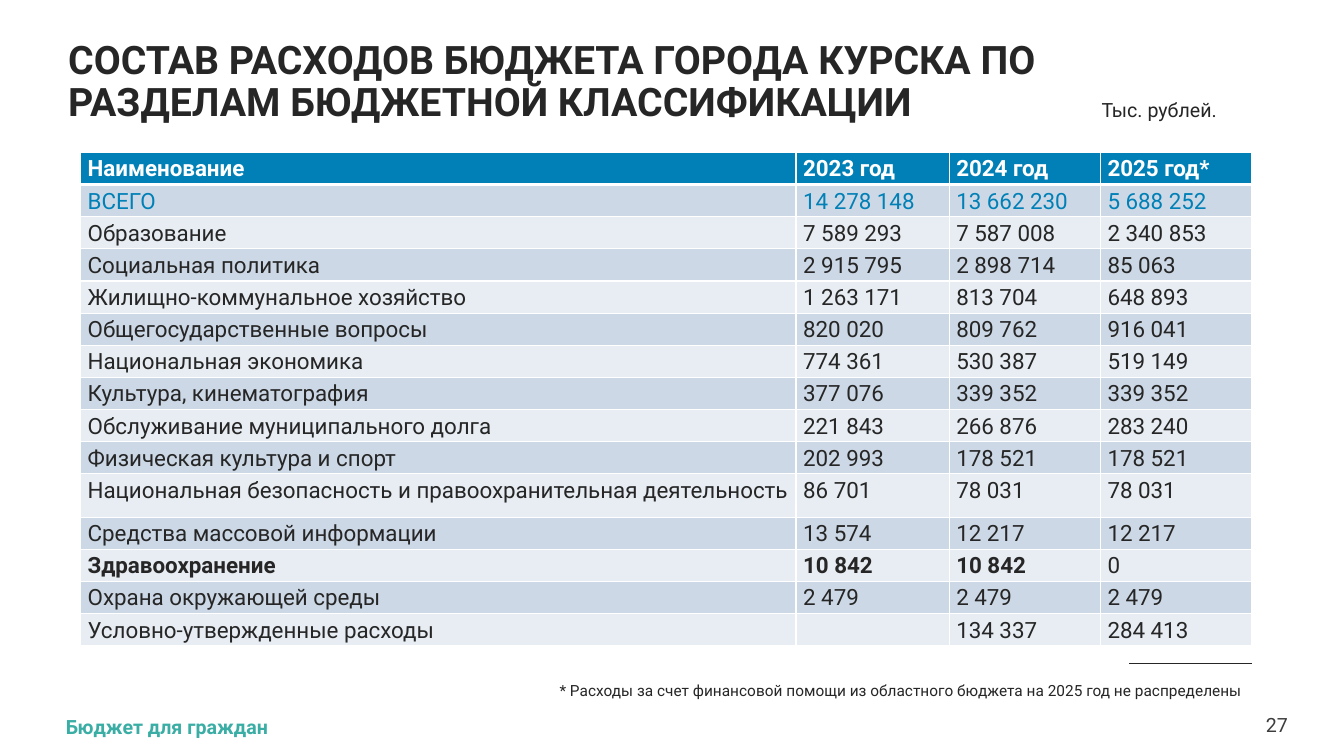
from dataclasses import dataclass

from lxml import etree
from pptx import Presentation
from pptx.dml.color import RGBColor
from pptx.enum.shapes import MSO_CONNECTOR
from pptx.enum.text import MSO_ANCHOR, PP_ALIGN
from pptx.oxml.ns import qn
from pptx.util import Cm, Pt

STRAIGHT = MSO_CONNECTOR.STRAIGHT
TOP, MIDDLE = MSO_ANCHOR.TOP, MSO_ANCHOR.MIDDLE
LEFT, RIGHT = PP_ALIGN.LEFT, PP_ALIGN.RIGHT


@dataclass(frozen=True)
class Theme:
    font: str = "Roboto"
    ink: str = "262626"
    page_ink: str = "3C3C3C"
    accent: str = "0080B6"
    footer: str = "3AADA5"
    white: str = "FFFFFF"
    bands: tuple = ("CCD8E5", "E7EDF3")
    title_size: float = 28
    table_size: float = 16
    label_size: float = 14
    note_size: float = 11


@dataclass(frozen=True)
class Box:
    left: float
    top: float
    width: float
    height: float

    def lengths(self):
        return Cm(self.left), Cm(self.top), Cm(self.width), Cm(self.height)


THEME = Theme()
COLUMN_WIDTHS = (18.03, 3.86, 3.81, 3.81)
ROW_HEIGHT = 0.81
TALL_ROW, TALL_HEIGHT = 10, 1.09
TOTAL_ROW = 1
BOLD_CELLS = {(12, 0), (12, 1), (12, 2)}
EXPENSES = (
    ("Наименование", "2023 год", "2024 год", "2025 год*"),
    ("ВСЕГО", "14 278 148", "13 662 230", "5 688 252"),
    ("Образование", "7 589 293", "7 587 008", "2 340 853"),
    ("Социальная политика", "2 915 795", "2 898 714", "85 063"),
    ("Жилищно-коммунальное хозяйство", "1 263 171", "813 704", "648 893"),
    ("Общегосударственные вопросы", "820 020", "809 762", "916 041"),
    ("Национальная экономика", "774 361", "530 387", "519 149"),
    ("Культура, кинематография", "377 076", "339 352", "339 352"),
    ("Обслуживание муниципального долга", "221 843", "266 876", "283 240"),
    ("Физическая культура и спорт", "202 993", "178 521", "178 521"),
    ("Национальная безопасность и правоохранительная деятельность",
     "86 701", "78 031", "78 031"),
    ("Средства массовой информации", "13 574", "12 217", "12 217"),
    ("Здравоохранение", "10 842", "10 842", "0"),
    ("Охрана окружающей среды", "2 479", "2 479", "2 479"),
    ("Условно-утвержденные расходы", "", "134 337", "284 413"),
)


def add_span(para, text, size, color, bold=False):
    span = para.add_run()
    span.text = text
    span.font.name = THEME.font
    span.font.size = Pt(size)
    span.font.bold = bold
    span.font.color.rgb = RGBColor.from_string(color)


def add_label(page, box, text, size, color=THEME.ink, bold=False,
              align=LEFT, anchor=TOP, inset=True, spacing=1.0):
    frame = page.shapes.add_textbox(*box.lengths()).text_frame
    frame.word_wrap = True
    frame.vertical_anchor = anchor
    if not inset:
        frame.margin_left = frame.margin_right = 0
        frame.margin_top = frame.margin_bottom = 0
    para = frame.paragraphs[0]
    para.alignment = align
    para.line_spacing = spacing
    add_span(para, text, size, color, bold)


def add_border(cell, side, points):
    border = etree.SubElement(cell._tc.get_or_add_tcPr(), qn("a:" + side), w=str(Pt(points)))
    fill = etree.SubElement(border, qn("a:solidFill"))
    etree.SubElement(fill, qn("a:srgbClr"), val=THEME.white)


def fill_cell(cell, text, row, column):
    header = row == 0
    for side in ("lnL", "lnR", "lnT", "lnB"):
        under_header = (row, side) in ((0, "lnB"), (1, "lnT"))
        add_border(cell, side, 3 if under_header else 1)
    cell.fill.solid()
    shade = THEME.accent if header else THEME.bands[(row - 1) % 2]
    cell.fill.fore_color.rgb = RGBColor.from_string(shade)
    cell.margin_left = cell.margin_right = Cm(0.18)
    cell.margin_top = cell.margin_bottom = 0
    para = cell.text_frame.paragraphs[0]
    para.line_spacing = 1.15
    color = {0: THEME.white, TOTAL_ROW: THEME.accent}.get(row, THEME.ink)
    add_span(para, text, THEME.table_size, color, header or (row, column) in BOLD_CELLS)


def add_heading(page, box):
    title = Box(box.left, box.top, box.width, 1.93)
    add_label(page, title, "СОСТАВ РАСХОДОВ БЮДЖЕТА ГОРОДА КУРСКА ПО РАЗДЕЛАМ БЮДЖЕТНОЙ КЛАССИФИКАЦИИ",
              THEME.title_size, bold=True, anchor=MIDDLE, spacing=0.9)
    unit = Box(box.left + 26.04, box.top + 1.22, 3.61, 0.86)
    add_label(page, unit, "Тыс. рублей.", THEME.label_size)


def add_expense_table(page, box):
    table = page.shapes.add_table(len(EXPENSES), len(COLUMN_WIDTHS), *box.lengths()).table
    table.horz_banding = False
    for column, width in zip(table.columns, COLUMN_WIDTHS):
        column.width = Cm(width)
    for row, values in enumerate(EXPENSES):
        table.rows[row].height = Cm(TALL_HEIGHT if row == TALL_ROW else ROW_HEIGHT)
        for column, text in enumerate(values):
            fill_cell(table.cell(row, column), text, row, column)


def add_footnote(page, box):
    right = box.left + box.width
    rule = page.shapes.add_connector(STRAIGHT, Cm(right - 3.1), Cm(box.top), Cm(right), Cm(box.top))
    rule.line.width = Pt(0.5)
    rule.line.color.rgb = RGBColor.from_string(THEME.ink)
    etree.SubElement(rule._element.spPr, qn("a:effectLst"))
    note = Box(box.left, box.top + 0.33, box.width, box.height - 0.33)
    add_label(page, note, "* Расходы за счет финансовой помощи из областного бюджета на 2025 год не распределены",
              THEME.note_size, align=RIGHT)


def add_footer(page, box):
    number_width = 0.64
    name = Box(box.left, box.top + 0.05, box.width - number_width, box.height)
    add_label(page, name, "Бюджет для граждан", THEME.label_size, THEME.footer, bold=True, inset=False)
    number = Box(box.left + box.width - number_width, box.top, number_width, box.height)
    add_label(page, number, "27", THEME.label_size, THEME.page_ink,
              align=RIGHT, anchor=MIDDLE, inset=False)


def main():
    deck = Presentation()
    deck.slide_width, deck.slide_height = Cm(33.87), Cm(19.05)
    page = deck.slides.add_slide(deck.slide_layouts[6])
    table_height = ROW_HEIGHT * (len(EXPENSES) - 1) + TALL_HEIGHT
    add_footer(page, Box(1.66, 17.96, 30.8, 0.6))
    add_heading(page, Box(1.47, 1.12, 30.18, 2.08))
    add_expense_table(page, Box(2.03, 3.84, sum(COLUMN_WIDTHS), table_height))
    add_footnote(page, Box(8.38, 16.71, 23.18, 1.96))
    deck.save("out.pptx")


if __name__ == "__main__":
    main()
